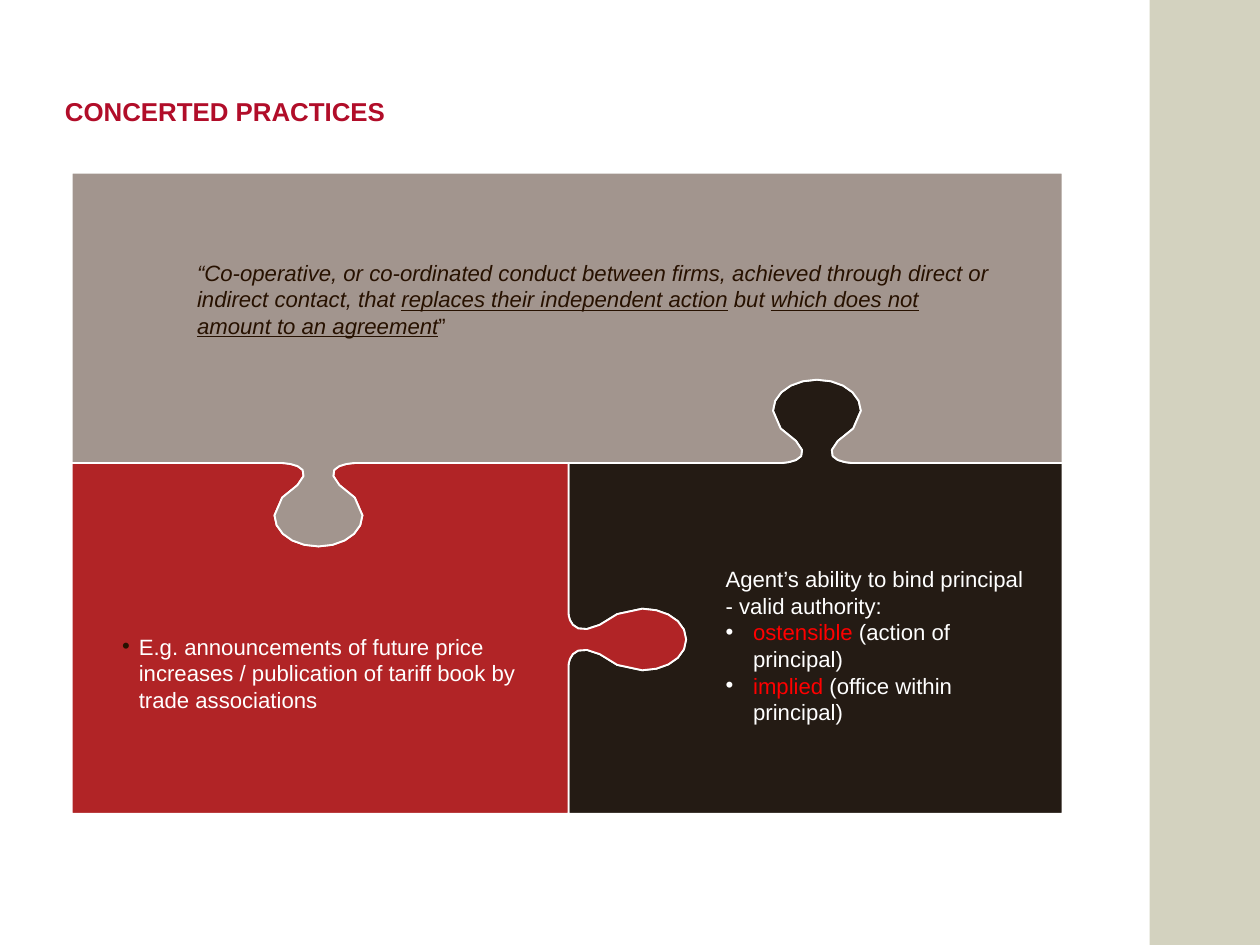
from typing import NamedTuple

from lxml.etree import SubElement
from pptx import Presentation
from pptx.dml.color import RGBColor
from pptx.enum.shapes import MSO_SHAPE
from pptx.enum.text import MSO_ANCHOR as Anchor
from pptx.oxml.ns import qn
from pptx.util import Cm, Pt

Point = tuple[float, float]

WHITE, INK, RED = "FFFFFF", "271100", "FF0000"

# Puzzle panel edges, in cm
LEFT, SEAM_X, RIGHT = 2.06, 16.3, 30.46
TOP, SEAM_Y, BOTTOM = 4.95, 13.28, 23.34


class Curve(NamedTuple):
    first: Point
    second: Point
    end: Point
    steps: int


# Half a knob as cubic curves: (along the edge, out from the edge), in cm
KNOB_START: Point = (-1.04, 0)
KNOB_CURVES = [
    Curve((-1.04, 0), (0.36, 0.03), (-1.04, 0.99), 7),
    Curve((-1.19, 1.14), (-1.26, 1.32), (-1.26, 1.5), 1),
    Curve((-1.26, 2), (-0.71, 2.39), (0, 2.39), 5),
]


class Run(NamedTuple):
    text: str
    color: str = WHITE
    italic: bool = False
    underline: bool = False


class Para(NamedTuple):
    runs: list[Run]
    bullet_color: str = ""
    hang: float = 0


class Piece(NamedTuple):
    outline: list[Point]
    fill: str


class Caption(NamedTuple):
    left: float
    top: float
    width: float
    height: float
    paras: list[Para]


def rgb(color: str) -> RGBColor:
    return RGBColor.from_string(color)


def knob_profile() -> list[Point]:
    """Sample the half knob and mirror it."""
    half, start = [KNOB_START], KNOB_START
    for first, second, end, steps in KNOB_CURVES:
        for step in range(1, steps + 1):
            t = step / steps
            u = 1 - t
            half.append(tuple(
                u**3 * a + 3 * u * u * t * b + 3 * u * t * t * c + t**3 * d
                for a, b, c, d in zip(start, first, second, end)))
        start = end
    return half + [(-along, out) for along, out in reversed(half[:-1])]


def flat_knob(center: float, direction: int) -> list[Point]:
    """Knob on the horizontal seam, from left to right."""
    return [(center + along, SEAM_Y + direction * out)
            for along, out in knob_profile()]


def side_knob(center: float) -> list[Point]:
    """Narrower, longer knob on the vertical seam, from top to bottom."""
    return [(SEAM_X + 1.41 * out, center + 0.7 * along)
            for along, out in knob_profile()]


def add_piece(slide, piece: Piece) -> None:
    points = [(Cm(x), Cm(y)) for x, y in piece.outline]
    builder = slide.shapes.build_freeform(*points[0])
    builder.add_line_segments(points[1:], close=True)
    shape = builder.convert_to_shape()
    shape.shadow.inherit = False
    shape.fill.solid()
    shape.fill.fore_color.rgb = rgb(piece.fill)
    shape.line.color.rgb = rgb(WHITE)
    shape.line.width = Pt(1.5)


def add_frame(slide, left: float, top: float, width: float, height: float):
    box = slide.shapes.add_textbox(Cm(left), Cm(top), Cm(width), Cm(height))
    frame = box.text_frame
    frame.word_wrap = True
    frame.margin_left = frame.margin_right = 0
    frame.margin_top = frame.margin_bottom = 0
    return frame


def add_run(paragraph, run: Run, size: float, bold: bool = False) -> None:
    added = paragraph.add_run()
    added.text = run.text
    font = added.font
    font.name, font.size, font.bold = "Arial", Pt(size), bold
    font.italic, font.underline = run.italic, run.underline
    font.color.rgb = rgb(run.color)


def add_bullet(paragraph, color: str, hang: float) -> None:
    props = paragraph._p.get_or_add_pPr()
    props.set("marL", str(Cm(hang)))
    props.set("indent", str(-Cm(hang)))
    bullet_color = SubElement(props, qn("a:buClr"))
    SubElement(bullet_color, qn("a:srgbClr")).set("val", color)
    SubElement(props, qn("a:buFont")).set("typeface", "Arial")
    SubElement(props, qn("a:buChar")).set("char", "•")


def add_caption(slide, caption: Caption) -> None:
    frame = add_frame(slide, *caption[:4])
    frame.vertical_anchor = Anchor.MIDDLE
    for index, para in enumerate(caption.paras):
        paragraph = frame.add_paragraph() if index else frame.paragraphs[0]
        if para.bullet_color:
            add_bullet(paragraph, para.bullet_color, para.hang)
        for run in para.runs:
            add_run(paragraph, run, 18)


DOWN_KNOB, UP_KNOB = flat_knob(9.13, 1), flat_knob(23.42, -1)
RIGHT_KNOB = side_knob(18.34)

AUTHORITY = Piece(
    [(SEAM_X, SEAM_Y), *UP_KNOB, (RIGHT, SEAM_Y), (RIGHT, BOTTOM),
     (SEAM_X, BOTTOM), *reversed(RIGHT_KNOB)], "241B14")
EXAMPLES = Piece(
    [(LEFT, SEAM_Y), *DOWN_KNOB, (SEAM_X, SEAM_Y), *RIGHT_KNOB,
     (SEAM_X, BOTTOM), (LEFT, BOTTOM)], "B12426")
DEFINITION = Piece(
    [(LEFT, SEAM_Y), *DOWN_KNOB, *UP_KNOB, (RIGHT, SEAM_Y),
     (RIGHT, TOP), (LEFT, TOP)], "A2958E")

CAPTIONS = [
    Caption(3.5, 18.14, 11.53, 2.31, [
        Para([Run("E.g. announcements of future price increases / "
                  "publication of tariff book by trade associations")], INK, 0.48),
    ]),
    Caption(20.8, 16.2, 8.84, 4.62, [
        Para([Run("Agent’s ability to bind principal - valid authority:")]),
        Para([Run("ostensible", RED), Run(" (action of principal)")], WHITE, 0.79),
        Para([Run("implied", RED), Run(" (office within principal)")], WHITE, 0.79),
    ]),
    Caption(5.65, 7.42, 22.96, 2.31, [
        Para([
            Run("“Co-operative, or co-ordinated conduct between firms, achieved "
                "through direct or indirect contact, that ", INK, True),
            Run("replaces their independent action", INK, True, True),
            Run(" but ", INK, True),
            Run("which does not amount to an agreement", INK, True, True),
            Run("”", INK),
        ]),
    ]),
]


def main() -> None:
    deck = Presentation()
    deck.slide_width, deck.slide_height = Cm(36.12), Cm(27.1)
    slide = deck.slides.add_slide(deck.slide_layouts[6])

    # Side band
    band = slide.shapes.add_shape(
        MSO_SHAPE.RECTANGLE, Cm(32.96), 0, Cm(3.16), Cm(27.1))
    band.shadow.inherit = False
    band.fill.solid()
    band.fill.fore_color.rgb = rgb("D3D2BF")
    band.line.fill.background()

    # Title
    title = add_frame(slide, 1.86, 2.74, 30, 3.1).paragraphs[0]
    title.line_spacing = Pt(25.2)
    add_run(title, Run("CONCERTED PRACTICES", "B10D29"), 21, bold=True)

    # Puzzle and its captions
    for piece in (AUTHORITY, EXAMPLES, DEFINITION):
        add_piece(slide, piece)
    for caption in CAPTIONS:
        add_caption(slide, caption)

    deck.save("out.pptx")


if __name__ == "__main__":
    main()
